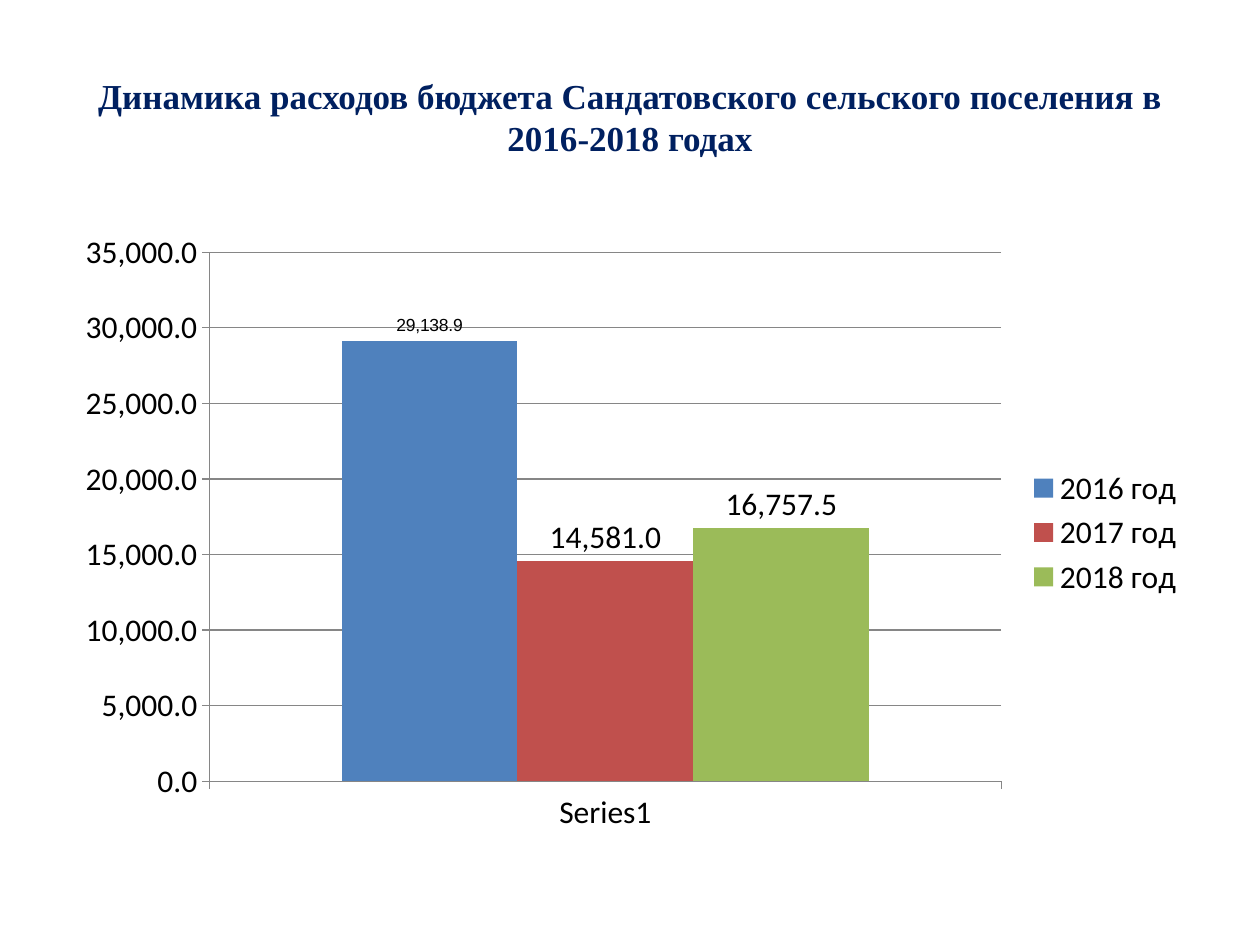
from pptx import Presentation
from pptx.chart.data import CategoryChartData
from pptx.dml.color import RGBColor
from pptx.enum.chart import XL_CHART_TYPE as CT, XL_LABEL_POSITION as LP
from pptx.enum.chart import XL_LEGEND_POSITION as LEGEND, XL_TICK_MARK as TICK
from pptx.enum.text import MSO_ANCHOR, PP_ALIGN
from pptx.util import Cm, Pt

TITLE = "Динамика расходов бюджета Сандатовского сельского поселения в 2016-2018 годах"
CATEGORY = "Series1"
NUMBER_FORMAT = "#,##0.0"
# name, spending, bar colour, label font, label size
YEARS = [
    ("2016 год", 29138.9, "4F81BD", "Arial", 10),
    ("2017 год", 14581.0, "C0504D", "Calibri", 18),
    ("2018 год", 16757.5, "9BBB59", "Calibri", 18),
]
LEFT, WIDTH = Cm(1.27), Cm(22.86)


def rgb(value):
    return RGBColor.from_string(value)


def set_font(font, name, size, color="000000", bold=False):
    font.name, font.size, font.bold = name, Pt(size), bold
    font.color.rgb = rgb(color)


def add_title(slide):
    tf = slide.shapes.add_textbox(LEFT, Cm(0.76), WIDTH, Cm(3.18)).text_frame
    tf.word_wrap = True
    tf.vertical_anchor = MSO_ANCHOR.MIDDLE
    tf.text = TITLE
    p = tf.paragraphs[0]
    p.alignment = PP_ALIGN.CENTER
    set_font(p.runs[0].font, "Times New Roman", 20, "002060", True)


def add_spending_chart(slide):
    data = CategoryChartData(number_format=NUMBER_FORMAT)
    data.categories = [CATEGORY]
    for name, value, *_ in YEARS:
        data.add_series(name, [value])
    chart = slide.shapes.add_chart(
        CT.COLUMN_CLUSTERED, LEFT, Cm(4.45), WIDTH, Cm(12.57), data).chart
    set_font(chart.font, "Calibri", 18)
    chart.has_title = False
    chart.has_legend = True
    chart.legend.position = LEGEND.RIGHT
    chart.legend.include_in_layout = False

    value_axis = chart.value_axis
    value_axis.minimum_scale, value_axis.maximum_scale = 0, 35000
    value_axis.major_unit = 5000
    value_axis.has_major_gridlines = True
    value_axis.tick_labels.number_format = NUMBER_FORMAT
    value_axis.tick_labels.number_format_is_linked = False
    for axis in (value_axis, chart.category_axis):
        axis.major_tick_mark = TICK.OUTSIDE
        axis.minor_tick_mark = TICK.NONE
    for part in (value_axis, chart.category_axis, value_axis.major_gridlines):
        part.format.line.color.rgb = rgb("868686")
        part.format.line.width = Pt(0.75)

    plot = chart.plots[0]
    plot.vary_by_categories = False
    plot.gap_width, plot.overlap = 150, 0
    for series, (_, _, color, font, size) in zip(plot.series, YEARS):
        series.format.fill.solid()
        series.format.fill.fore_color.rgb = rgb(color)
        series.invert_if_negative = False
        labels = series.data_labels
        labels.show_value = True
        labels.number_format = NUMBER_FORMAT
        labels.number_format_is_linked = False
        labels.position = LP.OUTSIDE_END
        set_font(labels.font, font, size)


def main():
    prs = Presentation()
    prs.slide_width, prs.slide_height = Cm(25.4), Cm(19.05)
    slide = prs.slides.add_slide(prs.slide_layouts[6])
    add_title(slide)
    add_spending_chart(slide)
    prs.save("out.pptx")


if __name__ == "__main__":
    main()
